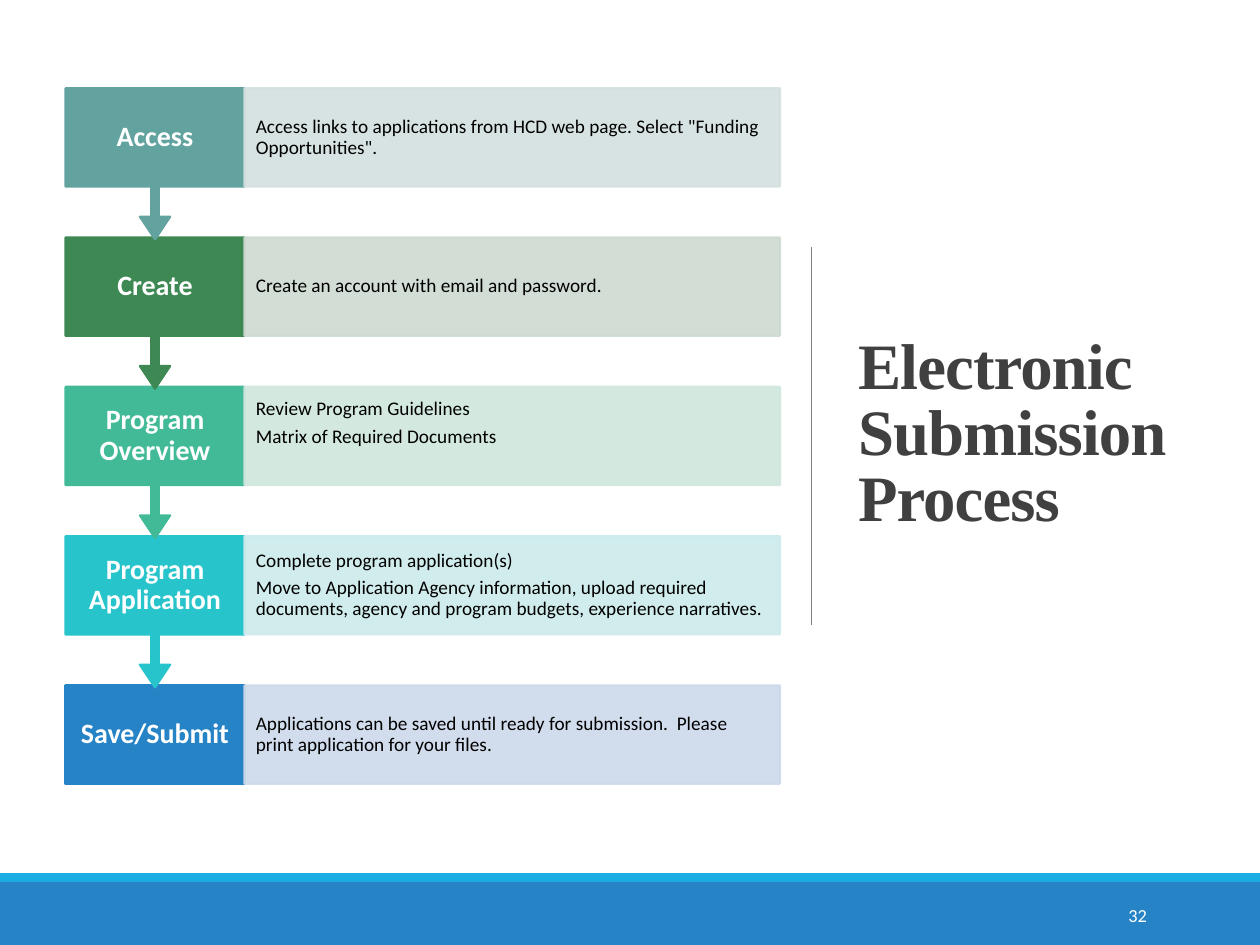
from dataclasses import dataclass

from lxml import etree
from pptx import Presentation, util as u
from pptx.dml.color import RGBColor
from pptx.enum import shapes, text
from pptx.oxml.ns import qn

COLORS = {
    "teal": "62A39F", "teal_pale": "D3E0DF",
    "green": "3E8853", "green_pale": "CEDAD1",
    "mint": "42BA97", "mint_pale": "CFE7DD",
    "cyan": "28C4CC", "cyan_pale": "CDEAEC",
    "blue": "2683C6", "blue_pale": "CDD9EA",
    "sky": "1CADE4", "rule": "808080", "title": "404040",
    "white": "FFFFFF", "black": "000000",
}

# Process grid, in inches: one row per step, a label and a detail column
WIDTH, HEIGHT = 10, 7.5
TOP, ROW_PITCH, ROW_HEIGHT, CALLOUT_HEIGHT = 0.7, 1.185, 0.78, 1.2
LABEL_LEFT, LABEL_WIDTH = 0.52, 1.42
DETAIL_LEFT, DETAIL_WIDTH = LABEL_LEFT + LABEL_WIDTH, 4.25
CALLOUT_ADJUSTMENTS = (0.05, 0.1, 0.15, 0.65)
FOOTER_TOP, STRIPE = 6.93, 0.07


@dataclass(frozen=True)
class Box:
    left: float
    top: float
    width: float
    height: float

    def emu(self) -> list[int]:
        return [u.Inches(v) for v in (self.left, self.top, self.width, self.height)]


@dataclass(frozen=True)
class Step:
    label: str
    color: str
    details: tuple[str, ...]
    lift: float = 0  # extra bottom inset that raises the detail text


@dataclass(frozen=True)
class Style:
    size: float
    color: str
    font: str = "Calibri"
    bold: bool = False
    align: text.PP_ALIGN = text.PP_ALIGN.LEFT
    line: float = 0.9


LABEL = Style(16, "white", bold=True, align=text.PP_ALIGN.CENTER)
DETAIL = Style(11, "black")
NUMBER = Style(10.5, "white", align=text.PP_ALIGN.RIGHT, line=1)
TITLE = Style(37, "title", "Times New Roman", bold=True, line=0.85)

STEPS = [
    Step("Access", "teal",
         ('Access links to applications from HCD web page. Select "Funding Opportunities".',)),
    Step("Create", "green", ("Create an account with email and password.",)),
    Step("Program Overview", "mint",
         ("Review Program Guidelines", "Matrix of Required Documents"), lift=0.2),
    Step("Program Application", "cyan",
         ("Complete program application(s)",
          "Move to Application Agency information, upload required documents, "
          "agency and program budgets, experience narratives.")),
    Step("Save/Submit", "blue",
         ("Applications can be saved until ready for submission.  "
          "Please print application for your files.",)),
]


def rgb(name: str) -> RGBColor:
    return RGBColor.from_string(COLORS[name])


def write(shape, lines: tuple[str, ...], style: Style,
          insets: tuple[float, float, float, float] = (0.1, 0.05, 0.1, 0.05)) -> None:
    """Fill a shape with vertically centred paragraphs; insets run left, top, right, bottom."""
    frame = shape.text_frame
    frame.word_wrap = True
    frame.auto_size = text.MSO_AUTO_SIZE.NONE
    frame.vertical_anchor = text.MSO_ANCHOR.MIDDLE
    (frame.margin_left, frame.margin_top,
     frame.margin_right, frame.margin_bottom) = [u.Inches(v) for v in insets]
    frame.text = "\n".join(lines)
    for index, para in enumerate(frame.paragraphs):
        para.alignment = style.align
        para.line_spacing = style.line
        para.space_before = u.Pt(0)
        para.space_after = u.Pt(0.35 * style.size if index < len(lines) - 1 else 0)
        for span in para.runs:
            span.font.name = style.font
            span.font.size = u.Pt(style.size)
            span.font.bold = style.bold
            span.font.color.rgb = rgb(style.color)


def add_block(page, kind: shapes.MSO_SHAPE, box: Box, color: str, outlined: bool = True):
    block = page.shapes.add_shape(kind, *box.emu())
    block.shadow.inherit = False
    block.fill.solid()
    block.fill.fore_color.rgb = rgb(color)
    if outlined:
        block.line.color.rgb = rgb(color)
        block.line.width = u.Pt(1.25)
    else:
        block.line.fill.background()
    return block


def set_opacity(block, percent: int) -> None:
    for color in block._element.spPr.iter(qn("a:srgbClr")):
        etree.SubElement(color, qn("a:alpha")).set("val", str(percent * 1000))


def add_text(page, box: Box, line: str, style: Style, **options) -> None:
    write(page.shapes.add_textbox(*box.emu()), (line,), style, **options)


def add_step(page, row: int, step: Step, is_last: bool) -> None:
    top = TOP + row * ROW_PITCH
    label_box = Box(LABEL_LEFT, top, LABEL_WIDTH, ROW_HEIGHT)
    if is_last:
        add_block(page, shapes.MSO_SHAPE.RECTANGLE, label_box, step.color)
    else:
        callout_box = Box(LABEL_LEFT, top, LABEL_WIDTH, CALLOUT_HEIGHT)
        callout = add_block(page, shapes.MSO_SHAPE.UP_ARROW_CALLOUT, callout_box, step.color)
        callout.rotation = 180
        for index, value in enumerate(CALLOUT_ADJUSTMENTS):
            callout.adjustments[index] = value
    # The label stays upright above the turned callout
    add_text(page, label_box, step.label, LABEL, insets=(0.1, 0.12, 0.1, 0.12))

    detail = add_block(page, shapes.MSO_SHAPE.RECTANGLE,
                       Box(DETAIL_LEFT, top, DETAIL_WIDTH, ROW_HEIGHT), step.color + "_pale")
    set_opacity(detail, 90)
    write(detail, step.details, DETAIL, (0.09, 0.05, 0.09, 0.05 + step.lift))


def add_title(page) -> None:
    title = page.shapes.title
    title.left, title.top, title.width, title.height = Box(6.71, 0.69, 2.77, 5.53).emu()
    write(title, ("Electronic Submission Process",), TITLE)
    for span in title.text_frame.paragraphs[0].runs:
        span._r.get_or_add_rPr().set("spc", "-50")


def add_rule(page) -> None:
    ends = [u.Inches(v) for v in (6.44, 1.96, 6.44, 4.96)]
    rule = page.shapes.add_connector(shapes.MSO_CONNECTOR.STRAIGHT, *ends)
    rule.line.color.rgb = rgb("rule")
    rule.line.width = u.Pt(0.5)
    etree.SubElement(rule._element.spPr, qn("a:effectLst"))


def main() -> None:
    deck = Presentation()
    deck.slide_width, deck.slide_height = u.Inches(WIDTH), u.Inches(HEIGHT)
    page = deck.slides.add_slide(deck.slide_layouts.get_by_name("Title Only"))

    # Title and divider
    add_title(page)
    add_rule(page)

    # Footer bands
    band_top = FOOTER_TOP + STRIPE
    for box, color in ((Box(0, FOOTER_TOP, WIDTH, STRIPE), "sky"),
                       (Box(0, band_top, WIDTH, HEIGHT - band_top), "blue")):
        add_block(page, shapes.MSO_SHAPE.RECTANGLE, box, color, outlined=False)

    # Steps from the bottom up, so each arrow tip lies over the next step
    for row, step in reversed(list(enumerate(STEPS))):
        add_step(page, row, step, is_last=row == len(STEPS) - 1)

    # Page number
    add_text(page, Box(8.12, 7.06, 1.08, 0.4), "32", NUMBER)

    deck.save("out.pptx")


if __name__ == "__main__":
    main()
